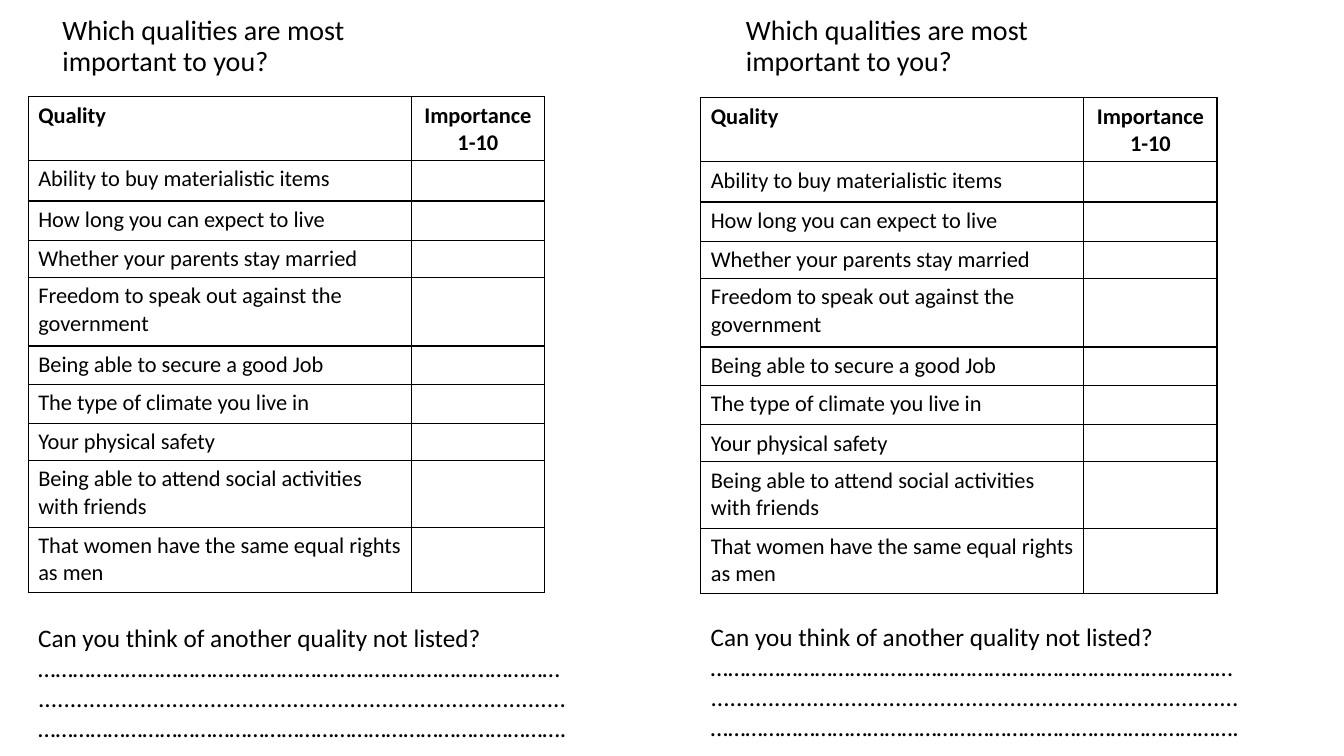
"""Build a slide with two side-by-side quality ranking worksheets."""
import pptx
import pptx.util
import pptx.dml.color
import pptx.enum.text
import pptx.oxml.ns
from lxml import etree

Inches = pptx.util.Inches
Pt = pptx.util.Pt
ALIGN = pptx.enum.text.PP_ALIGN
ANCHOR = pptx.enum.text.MSO_ANCHOR
FIT = pptx.enum.text.MSO_AUTO_SIZE

FONT = "Calibri"
COLORS = {"ink": "000000"}
TITLE = "Which qualities are most important to you?"
HEADERS = ["Quality", "Importance 1-10"]
QUALITIES = [
    ("Ability to buy materialistic items", 0.4),
    ("How long you can expect to live", 0.39),
    ("Whether your parents stay married", 0.37),
    ("Freedom to speak out against the government", 0.68),
    ("Being able to secure a good Job", 0.38),
    ("The type of climate you live in", 0.39),
    ("Your physical safety", 0.35),
    ("Being able to attend social activities with friends", 0.66),
    ("That women have the same equal rights as men", 0.65),
]
QUESTION = [
    "Can you think of another quality not listed?",
    "………………………………………………………………………………",
    "...................................................................................",
    "……………………………………………………………………………….",
]
HEADER_HEIGHT = 0.58
COLUMN_WIDTHS = [3.8, 1.32]
WORKSHEETS = [
    {"left": 0.28, "title_left": 0.52, "table_top": 0.96, "question_top": 6.12},
    {"left": 6.95, "title_left": 7.3, "table_top": 0.97, "question_top": 6.11},
]


def add_span(para, text, size, bold=False):
    span = para.add_run()
    span.text = text
    span.font.name = FONT
    span.font.size = Pt(size)
    span.font.bold = bold
    span.font.color.rgb = pptx.dml.color.RGBColor.from_string(COLORS["ink"])


def add_text(page, lines, left, top, width, height, size):
    box = page.shapes.add_textbox(Inches(left), Inches(top), Inches(width), Inches(height))
    frame = box.text_frame
    for index, line in enumerate(lines):
        para = frame.add_paragraph() if index else frame.paragraphs[0]
        add_span(para, line, size)
    return frame


def add_borders(cell):
    properties = cell._tc.get_or_add_tcPr()
    for side in ("lnL", "lnR", "lnT", "lnB"):
        line = etree.SubElement(properties, pptx.oxml.ns.qn(f"a:{side}"), w=str(Pt(1)))
        fill = etree.SubElement(line, pptx.oxml.ns.qn("a:solidFill"))
        etree.SubElement(fill, pptx.oxml.ns.qn("a:srgbClr"), val=COLORS["ink"])


def add_ranking(page, left, top):
    rows = [HEADERS] + [[quality, ""] for quality, height in QUALITIES]
    heights = [HEADER_HEIGHT] + [height for quality, height in QUALITIES]
    table = page.shapes.add_table(
        len(rows), len(COLUMN_WIDTHS), Inches(left), Inches(top),
        Inches(sum(COLUMN_WIDTHS)), Inches(sum(heights))).table
    for column, width in zip(table.columns, COLUMN_WIDTHS):
        column.width = Inches(width)
    for row_index, (texts, height) in enumerate(zip(rows, heights)):
        table.rows[row_index].height = Inches(height)
        for column_index, text in enumerate(texts):
            cell = table.cell(row_index, column_index)
            add_borders(cell)
            cell.fill.background()
            para = cell.text_frame.paragraphs[0]
            if column_index:
                para.alignment = ALIGN.CENTER
            if text:
                add_span(para, text, 16, bold=row_index == 0)
            else:
                etree.SubElement(para._p, pptx.oxml.ns.qn("a:endParaRPr"), sz="1600")


def add_worksheet(page, sheet):
    title = add_text(page, [TITLE], sheet["title_left"], -0.26, 3.79, 1.45, 20)
    title.word_wrap = True
    title.vertical_anchor = ANCHOR.MIDDLE
    title.paragraphs[0].line_spacing = 0.9
    add_ranking(page, sheet["left"], sheet["table_top"])
    question = add_text(page, QUESTION, sheet["left"], sheet["question_top"], 5.44, 1.31, 18)
    question.word_wrap = False
    question.auto_size = FIT.SHAPE_TO_FIT_TEXT


def main():
    deck = pptx.Presentation()
    deck.slide_width = Inches(13.33)
    deck.slide_height = Inches(7.5)
    page = deck.slides.add_slide(deck.slide_layouts[6])
    for sheet in WORKSHEETS:
        add_worksheet(page, sheet)
    deck.save("out.pptx")


if __name__ == "__main__":
    main()
